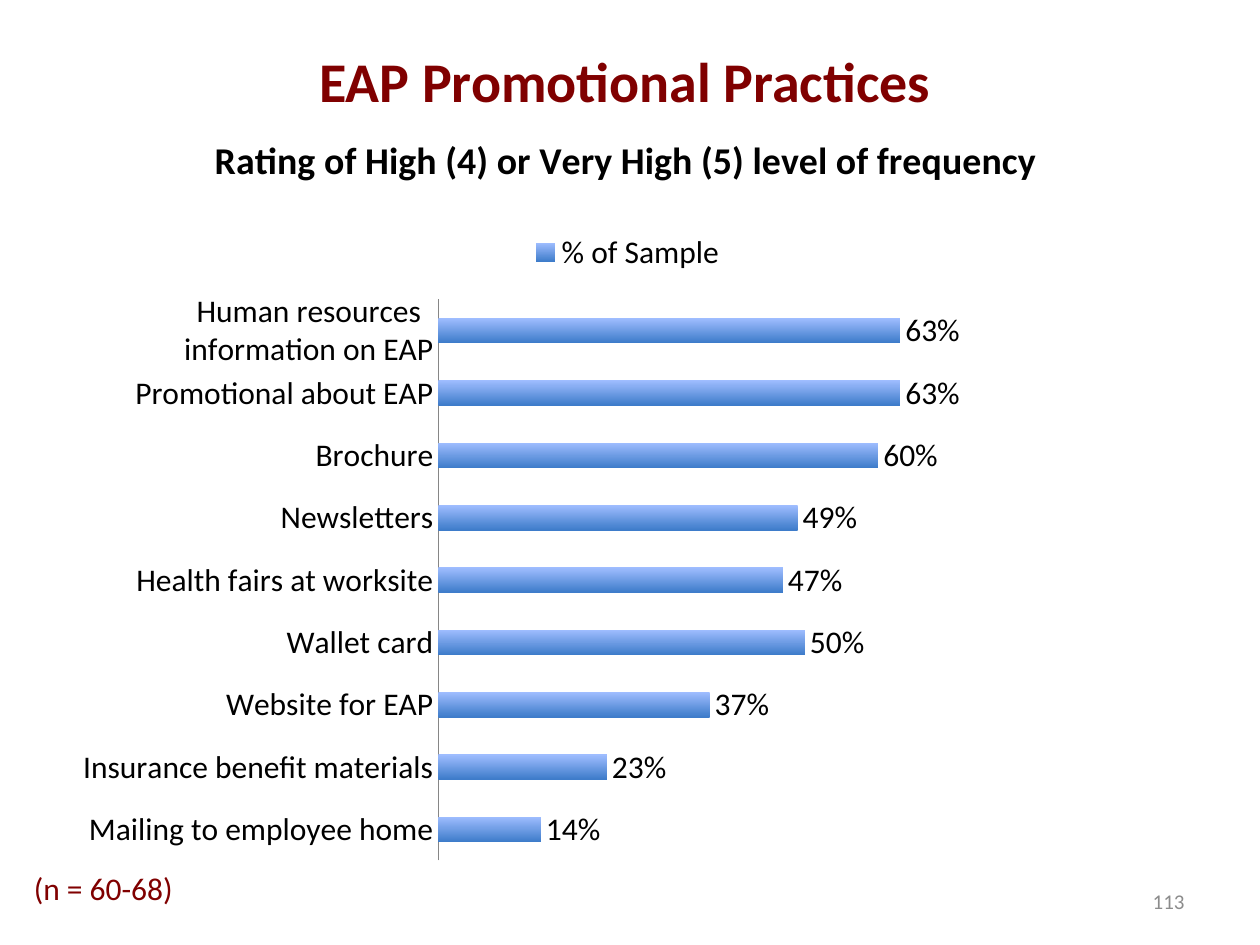
import lxml.etree
import pptx
import pptx.chart.data
import pptx.dml.color
import pptx.enum.chart
import pptx.enum.text
import pptx.oxml.ns
import pptx.util

Inches = pptx.util.Inches
Pt = pptx.util.Pt
RGBColor = pptx.dml.color.RGBColor
Align = pptx.enum.text.PP_ALIGN
Anchor = pptx.enum.text.MSO_ANCHOR
Chart = pptx.enum.chart

MAROON = RGBColor(0x80, 0x00, 0x00)
BLACK = RGBColor(0x00, 0x00, 0x00)
GRAY = RGBColor(0x8C, 0x8C, 0x8C)
AXIS_GRAY = RGBColor(0x86, 0x86, 0x86)
BAR_TOP = RGBColor(0x9F, 0xBD, 0xFF)
BAR_BOTTOM = RGBColor(0x3E, 0x7C, 0xCA)
FONT = "Calibri"


def format_font(font, size, color=BLACK, bold=False):
    font.name = FONT
    font.size = Pt(size)
    font.bold = bold
    font.color.rgb = color


def write_text(text_frame, text, size, color=BLACK, bold=False,
               align=Align.LEFT, anchor=Anchor.TOP, wrap=True):
    text_frame.word_wrap = wrap
    text_frame.vertical_anchor = anchor
    paragraph = text_frame.paragraphs[0]
    paragraph.alignment = align
    run = paragraph.add_run()
    run.text = text
    format_font(run.font, size, color, bold)


presentation = pptx.Presentation()
presentation.slide_width = Inches(10)
presentation.slide_height = Inches(7.5)
slide = presentation.slides.add_slide(presentation.slide_layouts[5])

# Title
title = slide.shapes.title
title.left, title.top = Inches(0.17), Inches(0.01)
title.width, title.height = Inches(9.58), Inches(1.25)
write_text(title.text_frame, "EAP Promotional Practices", size=32, color=MAROON,
           bold=True, align=Align.CENTER, anchor=Anchor.MIDDLE)

# Slide number
number_box = slide.shapes.add_textbox(Inches(7.17), Inches(6.95), Inches(2.33), Inches(0.4))
write_text(number_box.text_frame, "113", size=12, color=GRAY,
           align=Align.RIGHT, anchor=Anchor.MIDDLE)

# Bar chart, listed from the bottom bar up
practices = {
    "Mailing to employee home": 0.14,
    "Insurance benefit materials": 0.23,
    "Website for EAP": 0.37,
    "Wallet card": 0.50,
    "Health fairs at worksite": 0.47,
    "Newsletters": 0.49,
    "Brochure": 0.60,
    "Promotional about EAP": 0.63,
    "Human resources information on EAP": 0.63,
}
chart_data = pptx.chart.data.CategoryChartData(number_format="0%")
chart_data.categories = list(practices)
chart_data.add_series("% of Sample", list(practices.values()))
chart = slide.shapes.add_chart(
    Chart.XL_CHART_TYPE.BAR_CLUSTERED,
    Inches(0.48), Inches(1), Inches(9), Inches(5.95), chart_data).chart
format_font(chart.font, 18)

# Chart title, placed at the top edge of the chart
chart.has_title = True
chart_title = chart.chart_title
write_text(chart_title.text_frame,
           "Rating of High (4) or Very High (5) level of frequency",
           size=21.6, bold=True, align=Align.CENTER)
chart_title.include_in_layout = False
qn = pptx.oxml.ns.qn
title_element = chart.element.find(".//" + qn("c:title"))
layout = title_element.find(qn("c:layout"))
if layout is None:
    layout = lxml.etree.Element(qn("c:layout"))
    title_element.find(qn("c:tx")).addnext(layout)
manual_layout = lxml.etree.SubElement(layout, qn("c:manualLayout"))
for tag, value in (("xMode", "edge"), ("yMode", "edge"), ("x", "0.13"), ("y", "0")):
    lxml.etree.SubElement(manual_layout, qn("c:" + tag)).set("val", value)

# Legend
chart.has_legend = True
chart.legend.position = Chart.XL_LEGEND_POSITION.TOP
chart.legend.include_in_layout = False
format_font(chart.legend.font, 18)

# Axes
category_axis = chart.category_axis
category_axis.major_tick_mark = Chart.XL_TICK_MARK.NONE
category_axis.format.line.color.rgb = AXIS_GRAY
category_axis.format.line.width = Pt(1)
format_font(category_axis.tick_labels.font, 18)
value_axis = chart.value_axis
value_axis.minimum_scale = 0
value_axis.maximum_scale = 1
value_axis.has_major_gridlines = False
value_axis.visible = False

# Bars and their labels
plot = chart.plots[0]
plot.gap_width = 150
plot.overlap = -25
plot.vary_by_categories = False
fill = plot.series[0].format.fill
fill.gradient()
fill.gradient_angle = 270
for stop, color in zip(fill.gradient_stops, (BAR_TOP, BAR_BOTTOM)):
    stop.color.rgb = color
plot.has_data_labels = True
labels = plot.data_labels
labels.show_value = True
labels.number_format = "0%"
labels.number_format_is_linked = False
labels.position = Chart.XL_LABEL_POSITION.OUTSIDE_END
format_font(labels.font, 18)

# Sample size note
note_box = slide.shapes.add_textbox(Inches(0.17), Inches(6.85), Inches(1.37), Inches(0.4))
write_text(note_box.text_frame, "(n = 60-68)", size=18, color=MAROON, wrap=False)
note_box.text_frame.auto_size = pptx.enum.text.MSO_AUTO_SIZE.SHAPE_TO_FIT_TEXT

presentation.save("out.pptx")
